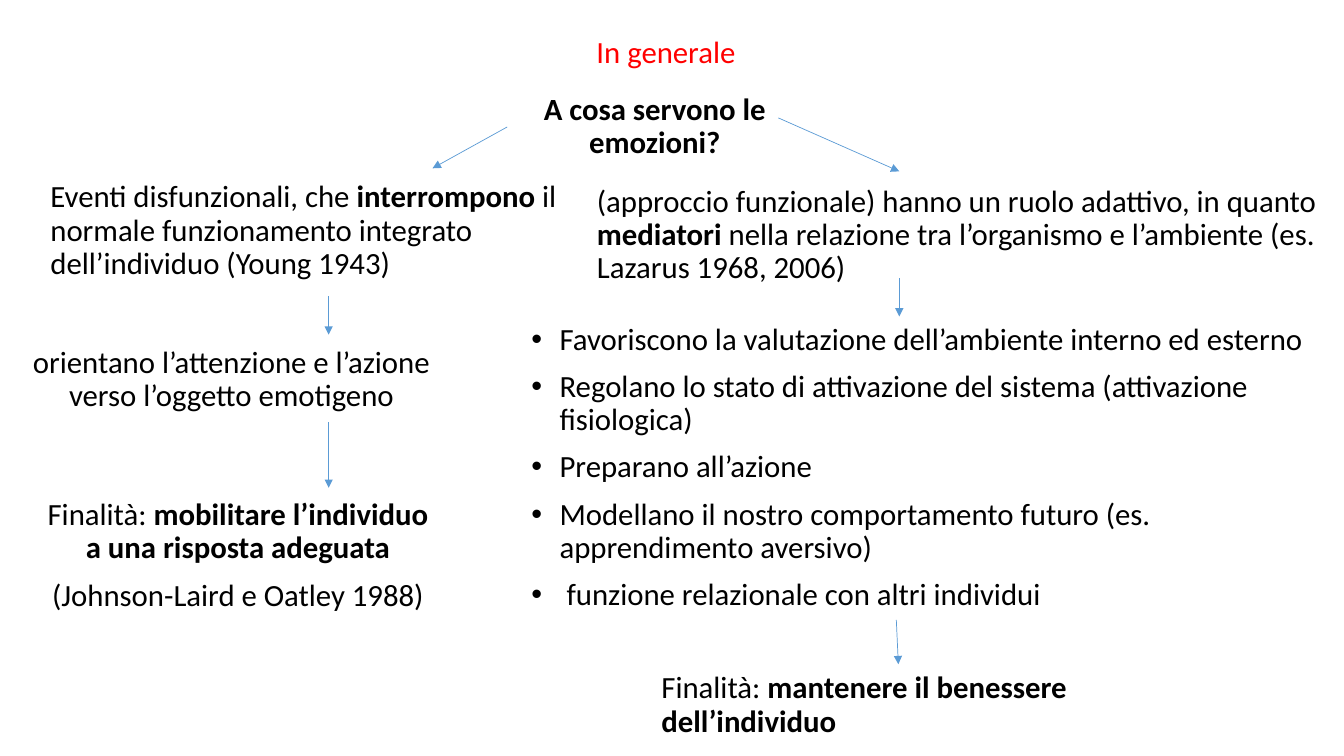
import lxml.etree
import pptx
import pptx.dml.color
import pptx.enum.shapes
import pptx.enum.text
import pptx.oxml.ns
import pptx.util

COLORS = {"title": "FF0000", "text": "000000", "arrow": "5B9BD5", "back": "FFFFFF"}
LEFT = pptx.enum.text.PP_ALIGN.LEFT
CENTER = pptx.enum.text.PP_ALIGN.CENTER


def px(n):
    """Convert px, at 100 to the inch, to EMU."""
    return pptx.util.Emu(n * 9144)


def rgb(name):
    return pptx.dml.color.RGBColor.from_string(COLORS[name])


def add_xml(parent, tag, **attrs):
    lxml.etree.SubElement(parent, pptx.oxml.ns.qn(tag), attrs)


class Board:
    font = "Calibri"
    size = pptx.util.Pt(22)
    bullet_indent = px(28)

    def __init__(self, prs):
        self.slide = prs.slides.add_slide(prs.slide_layouts[6])
        fill = self.slide.background.fill
        fill.solid()
        fill.fore_color.rgb = rgb("back")

    def text(self, box, paragraphs, align=LEFT, color="text", bullets=False, inset=(7, 4)):
        """Add a text box; parts between double asterisks are bold."""
        sp = self.slide.shapes.add_textbox(*map(px, box))
        tf = sp.text_frame
        tf.word_wrap = True
        tf.margin_left = tf.margin_right = px(inset[0])
        tf.margin_top = tf.margin_bottom = px(inset[1])
        for i, words in enumerate(paragraphs):
            p = tf.add_paragraph() if i else tf.paragraphs[0]
            p.alignment = align
            p.line_spacing = 0.9
            p.space_before = pptx.util.Pt(10 if i else 0)
            if bullets:
                self.bullet(p)
            for j, part in enumerate(words.split("**")):
                if part:
                    r = p.add_run()
                    r.text = part
                    r.font.name = self.font
                    r.font.size = self.size
                    r.font.bold = j % 2 == 1
                    r.font.color.rgb = rgb(color)

    def bullet(self, p):
        pPr = p._p.get_or_add_pPr()
        pPr.set("marL", str(int(self.bullet_indent)))
        pPr.set("indent", str(-int(self.bullet_indent)))
        add_xml(pPr, "a:buFont", typeface="Arial")
        add_xml(pPr, "a:buChar", char="•")

    def arrow(self, x1, y1, x2, y2):
        connector = self.slide.shapes.add_connector(
            pptx.enum.shapes.MSO_CONNECTOR.STRAIGHT, px(x1), px(y1), px(x2), px(y2))
        connector.line.color.rgb = rgb("arrow")
        connector.line.width = pptx.util.Pt(0.5)
        spPr = connector._element.spPr
        add_xml(spPr.find(pptx.oxml.ns.qn("a:ln")), "a:tailEnd", type="triangle")
        add_xml(spPr, "a:effectLst")


def main():
    prs = pptx.Presentation()
    prs.slide_width, prs.slide_height = px(1333), px(750)
    board = Board(prs)

    board.text((43, 32, 1242, 69), ["In generale "], CENTER, "title", inset=(10, 5))
    board.text((466, 89, 367, 43), ["**A cosa servono le emozioni?**"], CENTER)

    board.text((43, 176, 606, 183), [
        "Eventi disfunzionali, che **interrompono** il normale funzionamento integrato "
        "dell’individuo (Young 1943)"])
    board.text((0, 340, 459, 125), [
        "orientano l’attenzione e l’azione verso l’oggetto emotigeno"], CENTER)
    board.text((39, 491, 394, 125), [
        "Finalità: **mobilitare l’individuo a una risposta adeguata**",
        "(Johnson-Laird e Oatley 1988)"], CENTER)

    board.text((585, 180, 732, 126), [
        "(approccio funzionale) hanno un ruolo adattivo, in quanto **mediatori** nella "
        "relazione tra l’organismo e l’ambiente (es. Lazarus 1968, 2006)"])
    board.text((520, 317, 821, 111), [
        "Favoriscono la valutazione dell’ambiente interno ed esterno",
        "Regolano lo stato di attivazione del sistema (attivazione fisiologica)",
        "Preparano all’azione",
        "Modellano il nostro comportamento futuro (es. apprendimento aversivo)",
        " funzione relazionale con altri individui"], bullets=True)
    board.text((649, 663, 548, 67), [
        "Finalità: **mantenere il benessere dell’individuo**"])

    for ends in [(503, 126, 429, 167), (772, 117, 892, 170), (326, 294, 326, 332),
                 (326, 419, 326, 484), (892, 276, 892, 314), (889, 615, 891, 659)]:
        board.arrow(*ends)

    prs.save("out.pptx")


if __name__ == "__main__":
    main()
